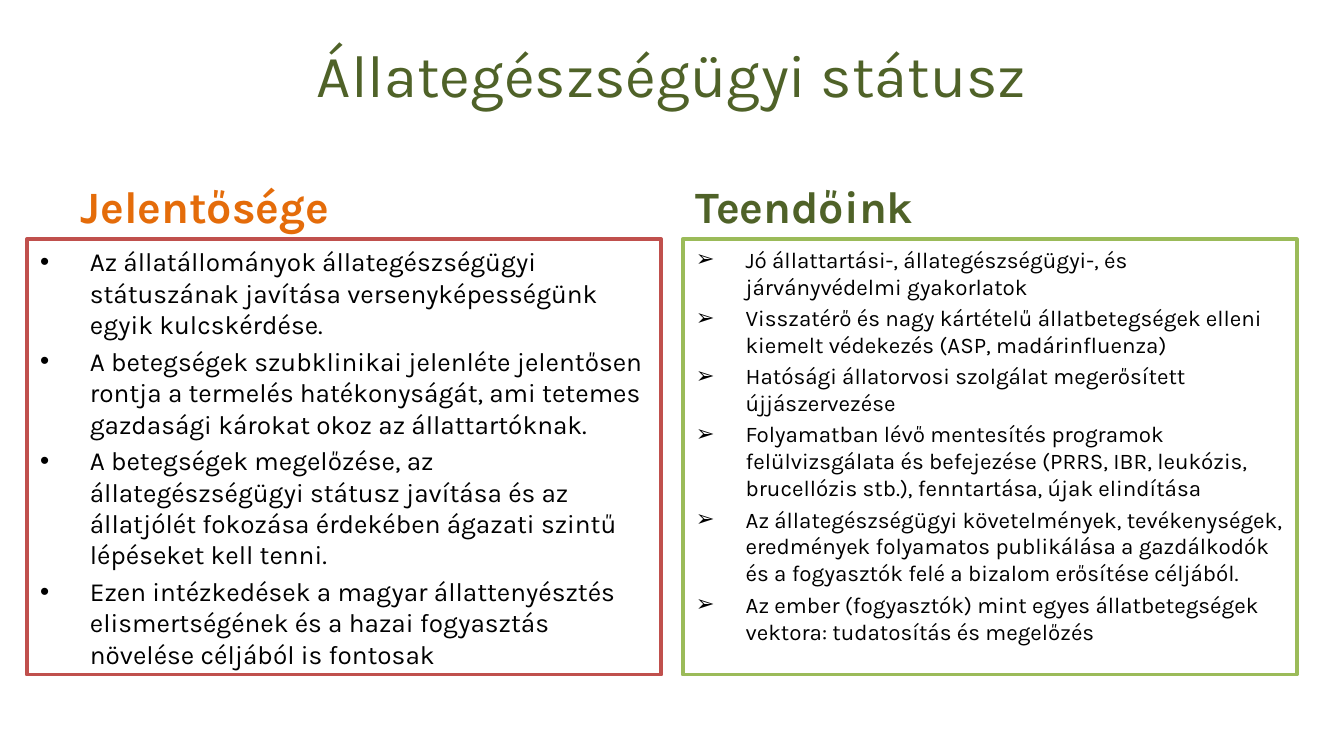
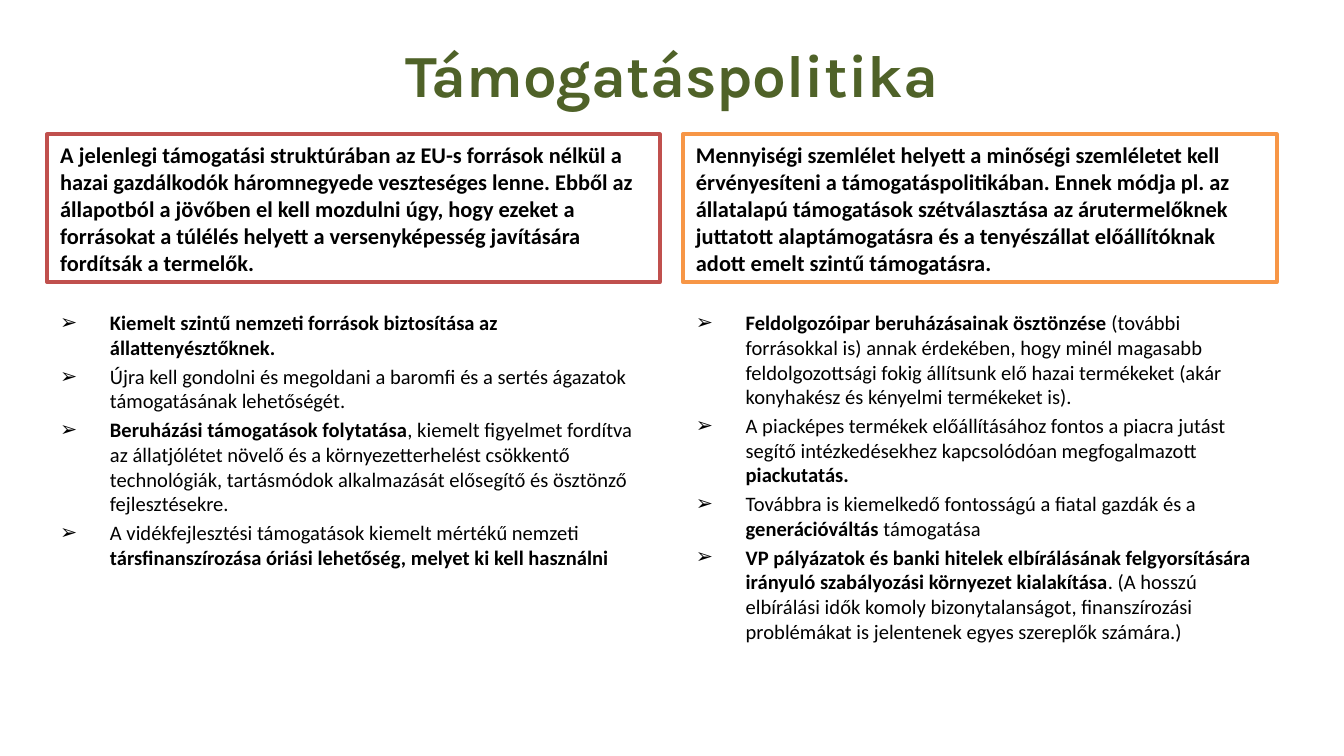
from dataclasses import dataclass
from typing import Any

from lxml import etree
from pptx import Presentation
from pptx.dml.color import RGBColor
from pptx.enum.shapes import MSO_SHAPE
from pptx.enum.text import MSO_ANCHOR, MSO_AUTO_SIZE, PP_ALIGN
from pptx.oxml.ns import qn
from pptx.util import Inches, Pt

RECTANGLE = MSO_SHAPE.RECTANGLE
TOP, BOTTOM = MSO_ANCHOR.TOP, MSO_ANCHOR.BOTTOM
NO_FIT = MSO_AUTO_SIZE.NONE
LEFT, CENTER = PP_ALIGN.LEFT, PP_ALIGN.CENTER

GREEN = RGBColor(0x4F, 0x62, 0x28)
ORANGE = RGBColor(0xE4, 0x6C, 0x0A)
BLACK = RGBColor(0x00, 0x00, 0x00)
WHITE = RGBColor(0xFF, 0xFF, 0xFF)
RED_LINE = RGBColor(0xC0, 0x50, 0x4D)
GREEN_LINE = RGBColor(0x9B, 0xBB, 0x59)
ORANGE_LINE = RGBColor(0xF7, 0x96, 0x46)

KARLA, CALIBRI = "Karla", "Calibri"
DOT, ARROW = "•", "➢"
TITLE_ONLY = 5
SLIDE_WIDTH = Inches(10)
SLIDE_HEIGHT = SLIDE_WIDTH * 9 // 16
INDENT = Inches(0.37)
SPACE_SHARE = 0.2
RIGHT_COLUMN = 5.08


@dataclass(frozen=True)
class Span:
    text: str
    bold: bool = False


@dataclass(frozen=True)
class Panel:
    left: float
    top: float
    width: float
    height: float
    paragraphs: list[list[Span]]
    size: float
    font: str
    color: RGBColor = BLACK
    outline: RGBColor | None = None
    bullet: str = ""
    anchor: MSO_ANCHOR = TOP


@dataclass(frozen=True)
class Page:
    title: Span
    panels: list[Panel]


def plain(*texts: str) -> list[list[Span]]:
    return [[Span(text)] for text in texts]


def strong(text: str) -> list[list[Span]]:
    return [[Span(text, True)]]


def heading(left: float, text: str, color: RGBColor) -> Panel:
    return Panel(left, 1.26, 4.42, 0.52, strong(text), 24, KARLA, color, anchor=BOTTOM)


def framed_list(left: float, width: float, outline: RGBColor, size: float,
                bullet: str, *texts: str) -> Panel:
    return Panel(left, 1.78, width, 3.24, plain(*texts), size, KARLA,
                 outline=outline, bullet=bullet)


def statement(left: float, width: float, outline: RGBColor, text: str) -> Panel:
    return Panel(left, 1, width, 1.1, strong(text), 12, CALIBRI,
                 outline=outline, anchor=BOTTOM)


def open_list(left: float, width: float, paragraphs: list[list[Span]]) -> Panel:
    return Panel(left, 2.26, width, 2.68, paragraphs, 11, CALIBRI, bullet=ARROW)


PAGES = [
    Page(Span("Állategészségügyi státusz"), [
        heading(0.5, "Jelentősége", ORANGE),
        framed_list(
            0.2, 4.72, RED_LINE, 14, DOT,
            "Az állatállományok állategészségügyi státuszának javítása "
            "versenyképességünk egyik kulcskérdése.",
            "A betegségek szubklinikai jelenléte jelentősen rontja a termelés "
            "hatékonyságát, ami tetemes gazdasági károkat okoz az állattartóknak.",
            "A betegségek megelőzése, az állategészségügyi státusz javítása és az "
            "állatjólét fokozása érdekében ágazati szintű lépéseket kell tenni.",
            "Ezen intézkedések a magyar állattenyésztés elismertségének és a hazai "
            "fogyasztás növelése céljából is fontosak",
        ),
        heading(RIGHT_COLUMN, "Teendőink", GREEN),
        framed_list(
            RIGHT_COLUMN, 4.57, GREEN_LINE, 12, ARROW,
            "Jó állattartási-, állategészségügyi-, és járványvédelmi gyakorlatok",
            "Visszatérő és nagy kártételű állatbetegségek elleni kiemelt védekezés "
            "(ASP, madárinfluenza)",
            "Hatósági állatorvosi szolgálat megerősített újjászervezése",
            "Folyamatban lévő mentesítés programok felülvizsgálata és befejezése "
            "(PRRS, IBR, leukózis, brucellózis stb.), fenntartása, újak elindítása",
            "Az állategészségügyi követelmények, tevékenységek, eredmények folyamatos "
            "publikálása a gazdálkodók és a fogyasztók felé a bizalom erősítése céljából.",
            "Az ember (fogyasztók) mint egyes állatbetegségek vektora: tudatosítás és "
            "megelőzés",
        ),
    ]),
    Page(Span("Támogatáspolitika", True), [
        statement(
            0.35, 4.56, RED_LINE,
            "A jelenlegi támogatási struktúrában az EU-s források nélkül a hazai "
            "gazdálkodók háromnegyede veszteséges lenne. Ebből az állapotból a jövőben "
            "el kell mozdulni úgy, hogy ezeket a forrásokat a túlélés helyett a "
            "versenyképesség javítására fordítsák a termelők.",
        ),
        open_list(0.35, 4.56, [
            [Span("Kiemelt szintű nemzeti források biztosítása az állattenyésztőknek.", True)],
            [Span("Újra kell gondolni és megoldani a baromfi és a sertés ágazatok "
                  "támogatásának lehetőségét.")],
            [Span("Beruházási támogatások folytatása", True),
             Span(", kiemelt figyelmet fordítva az állatjólétet növelő és a "
                  "környezetterhelést csökkentő technológiák, tartásmódok alkalmazását "
                  "elősegítő és ösztönző fejlesztésekre.")],
            [Span("A vidékfejlesztési támogatások kiemelt mértékű nemzeti "),
             Span("társfinanszírozása óriási lehetőség, melyet ki kell használni", True)],
        ]),
        statement(
            RIGHT_COLUMN, 4.42, ORANGE_LINE,
            "Mennyiségi szemlélet helyett a minőségi szemléletet kell érvényesíteni a "
            "támogatáspolitikában. Ennek módja pl. az állatalapú támogatások "
            "szétválasztása az árutermelőknek juttatott alaptámogatásra és a "
            "tenyészállat előállítóknak adott emelt szintű támogatásra.",
        ),
        open_list(RIGHT_COLUMN, 4.42, [
            [Span("Feldolgozóipar beruházásainak ösztönzése ", True),
             Span("(további forrásokkal is) annak érdekében, hogy minél magasabb "
                  "feldolgozottsági fokig állítsunk elő hazai termékeket (akár "
                  "konyhakész és kényelmi termékeket is).")],
            [Span("A piacképes termékek előállításához fontos a piacra jutást segítő "
                  "intézkedésekhez kapcsolódóan megfogalmazott "),
             Span("piackutatás.", True)],
            [Span("Továbbra is kiemelkedő fontosságú a fiatal gazdák és a "),
             Span("generációváltás", True),
             Span(" támogatása")],
            [Span("VP pályázatok és banki hitelek elbírálásának felgyorsítására "
                  "irányuló szabályozási környezet kialakítása", True),
             Span(". (A hosszú elbírálási idők komoly bizonytalanságot, finanszírozási "
                  "problémákat is jelentenek egyes szereplők számára.)")],
        ]),
    ]),
]


def apply_format(target: Any, values: dict[str, Any]) -> None:
    for name, value in values.items():
        setattr(target, name, value)


def add_span(para: Any, span: Span, size: float, font: str, color: RGBColor) -> None:
    run = para.add_run()
    run.text = span.text
    apply_format(run.font, {"name": font, "size": Pt(size), "bold": span.bold})
    run.font.color.rgb = color


def add_bullet(para: Any, mark: str) -> None:
    properties = para._p.get_or_add_pPr()
    properties.set("marL", str(int(INDENT)))
    properties.set("indent", str(-int(INDENT)))
    etree.SubElement(properties, qn("a:buFont")).set("typeface", "Arial")
    etree.SubElement(properties, qn("a:buChar")).set("char", mark)


def draw_title(slide: Any, title: Span) -> None:
    box = slide.shapes.title
    apply_format(box, {"left": Inches(0.5), "top": Inches(0.23),
                       "width": Inches(9), "height": Inches(0.94)})
    frame = box.text_frame
    apply_format(frame, {"word_wrap": True, "auto_size": NO_FIT, "vertical_anchor": TOP})
    para = frame.paragraphs[0]
    para.alignment = CENTER
    add_span(para, title, 32, KARLA, GREEN)


def draw_panel(slide: Any, panel: Panel) -> None:
    place = [Inches(value) for value in (panel.left, panel.top, panel.width, panel.height)]
    if panel.outline is None:
        box = slide.shapes.add_textbox(*place)
    else:
        box = slide.shapes.add_shape(RECTANGLE, *place)
        box.shadow.inherit = False
        box.fill.solid()
        box.fill.fore_color.rgb = WHITE
        box.line.color.rgb = panel.outline
        box.line.width = Pt(2)
    frame = box.text_frame
    apply_format(frame, {"word_wrap": True, "auto_size": NO_FIT,
                         "vertical_anchor": panel.anchor})
    for index, spans in enumerate(panel.paragraphs):
        para = frame.add_paragraph() if index else frame.paragraphs[0]
        para.alignment = LEFT
        if panel.bullet:
            add_bullet(para, panel.bullet)
        para.space_before = Pt(panel.size * SPACE_SHARE if index else 0)
        for span in spans:
            add_span(para, span, panel.size, panel.font, panel.color)


def main() -> None:
    deck = Presentation()
    apply_format(deck, {"slide_width": SLIDE_WIDTH, "slide_height": SLIDE_HEIGHT})
    for page in PAGES:
        slide = deck.slides.add_slide(deck.slide_layouts[TITLE_ONLY])
        draw_title(slide, page.title)
        for panel in page.panels:
            draw_panel(slide, panel)
    deck.save("out.pptx")


if __name__ == "__main__":
    main()
